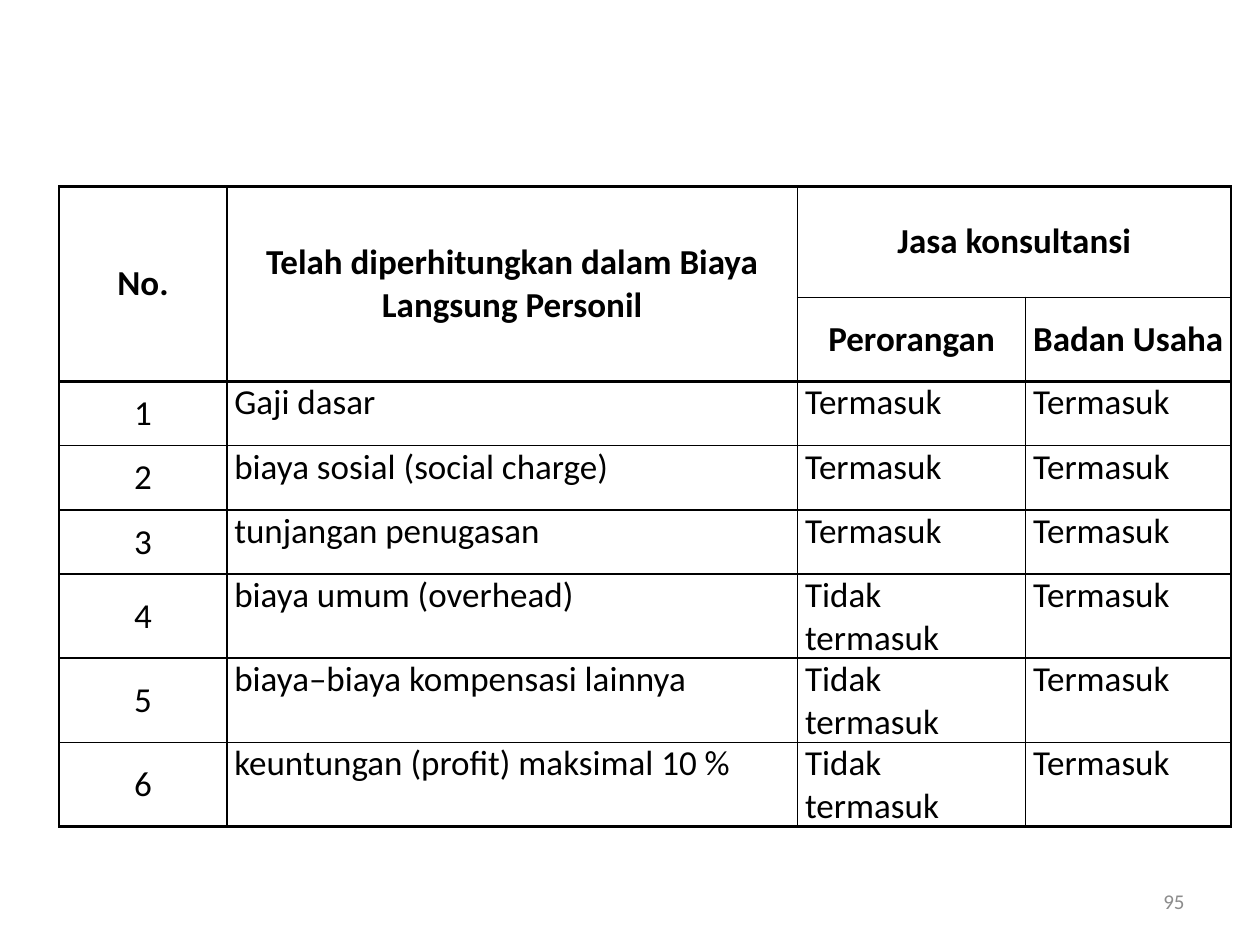
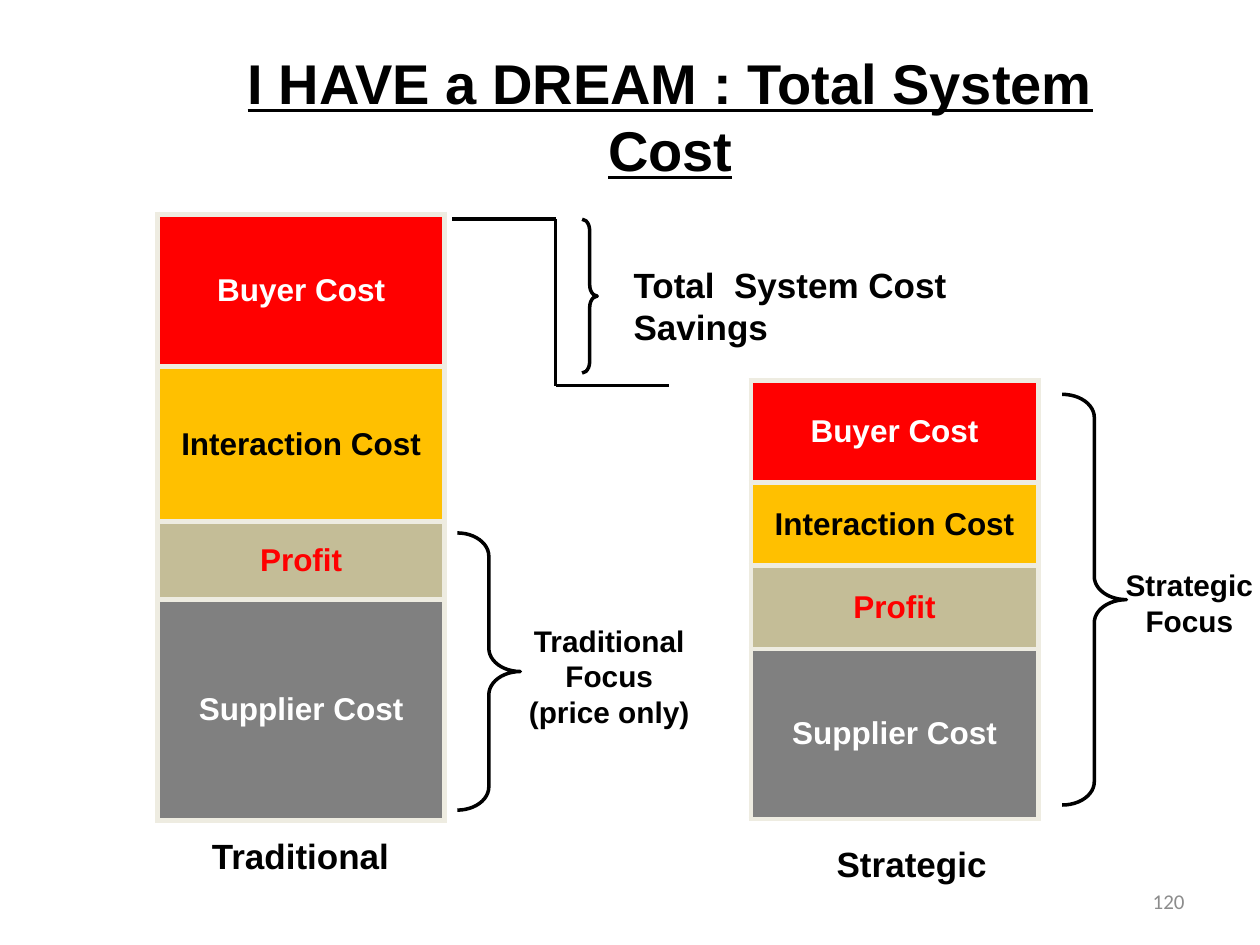
"""Build two slides: a table of personnel costs and a comparison of total system cost."""
import pptx
import pptx.util
import pptx.dml.color
import pptx.enum.shapes
import pptx.enum.text
import pptx.oxml.ns
from lxml import etree

COLORS = {
    "ink": "000000", "paper": "FFFFFF", "muted": "8C8C8C", "rule": "EEECE1",
    "buyer": "FF0000", "interaction": "FFC000", "profit": "C4BD97", "supplier": "808080",
}
COLUMNS, ROWS = 100, 75
SLIDE_WIDTH, SLIDE_HEIGHT = pptx.util.Inches(10), pptx.util.Inches(7.5)
ALIGN = pptx.enum.text.PP_ALIGN
ANCHOR = pptx.enum.text.MSO_ANCHOR
MIDDLE = ANCHOR.MIDDLE

PERSONNEL_COSTS = [
    ("Gaji dasar", "Termasuk"),
    ("biaya sosial (social charge)", "Termasuk"),
    ("tunjangan penugasan", "Termasuk"),
    ("biaya umum (overhead)", "Tidak termasuk"),
    ("biaya–biaya kompensasi lainnya", "Tidak termasuk"),
    ("keuntungan (profit) maksimal 10 %", "Tidak termasuk"),
]
COST_LAYERS = [
    ("Buyer Cost", "buyer", "paper"),
    ("Interaction Cost", "interaction", "ink"),
    ("Profit", "profit", "buyer"),
    ("Supplier Cost", "supplier", "paper"),
]


def across(columns):
    """Return the length of a number of grid columns."""
    return round(SLIDE_WIDTH * columns / COLUMNS)


def down(rows):
    """Return the length of a number of grid rows."""
    return round(SLIDE_HEIGHT * rows / ROWS)


def place(left, top, width, height):
    """Turn a grid area into slide lengths."""
    return across(left), down(top), across(width), down(height)


def rgb(name):
    """Look up a named colour."""
    return pptx.dml.color.RGBColor.from_string(COLORS[name])


def write(frame, text, size=20, font="Arial", color="ink", bold=True,
          underline=False, align=ALIGN.CENTER):
    """Write one formatted paragraph into a text frame."""
    paragraph = frame.paragraphs[0]
    paragraph.alignment = align
    run = paragraph.add_run()
    run.text = text
    run.font.size = pptx.util.Pt(size)
    run.font.name = font
    run.font.bold = bold
    run.font.underline = underline
    run.font.color.rgb = rgb(color)


def add_label(slide, area, text, anchor=ANCHOR.TOP, **style):
    """Add a wrapped text box on a grid area."""
    frame = slide.shapes.add_textbox(*place(*area)).text_frame
    frame.word_wrap = True
    frame.vertical_anchor = anchor
    write(frame, text, **style)


def add_page_number(slide, number):
    """Add the page number at the lower right."""
    add_label(slide, (71.7, 69.5, 23.3, 4), str(number), anchor=MIDDLE, size=12,
              font="Calibri", color="muted", bold=False, align=ALIGN.RIGHT)


def add_grid(slide, left, top, widths, heights):
    """Add an unbanded table with the given column widths and row heights."""
    area = place(left, top, sum(widths), sum(heights))
    table = slide.shapes.add_table(len(heights), len(widths), *area).table
    table.first_row = table.horz_banding = False
    for column, width in zip(table.columns, widths):
        column.width = across(width)
    for row, height in zip(table.rows, heights):
        row.height = down(height)
    return table


def set_borders(cell, color, **weights):
    """Draw cell borders from point weights keyed by L, R, T and B."""
    properties = cell._tc.get_or_add_tcPr()
    qn = pptx.oxml.ns.qn
    for side, weight in weights.items():
        border = etree.SubElement(properties, qn(f"a:ln{side}"), w=str(pptx.util.Pt(weight)))
        fill = etree.SubElement(border, qn("a:solidFill"))
        etree.SubElement(fill, qn("a:srgbClr"), val=COLORS[color])


def add_personnel_table(slide):
    """Add the table of what direct personnel cost includes."""
    widths = [13.3, 45.3, 18.1, 16.3]
    heights = [8.8] + [5.1] * (len(PERSONNEL_COSTS) + 1)
    table = add_grid(slide, 4.7, 14.8, widths, heights)
    for start, end in [((0, 0), (1, 0)), ((0, 1), (1, 1)), ((0, 2), (0, 3))]:
        table.cell(*start).merge(table.cell(*end))
    header_rows = [
        ["No.", "Telah diperhitungkan dalam Biaya Langsung Personil", "Jasa konsultansi", ""],
        ["", "", "Perorangan", "Badan Usaha"],
    ]
    cost_rows = [[str(number), cost, individual, "Termasuk"]
                 for number, (cost, individual) in enumerate(PERSONNEL_COSTS, 1)]
    heavy_rows, heavy_columns = {0, 2, len(heights)}, {0, len(widths)}
    for r, texts in enumerate(header_rows + cost_rows):
        for c, text in enumerate(texts):
            cell = table.cell(r, c)
            if cell.is_spanned:
                continue
            heading = r < len(header_rows)
            centered = heading or c == 0
            across_edges = {"T": r, "B": r + cell.span_height}
            side_edges = {"L": c, "R": c + cell.span_width}
            weights = {side: 1.5 if edge in heavy else 1
                       for edges, heavy in ((side_edges, heavy_columns), (across_edges, heavy_rows))
                       for side, edge in edges.items()}
            set_borders(cell, "ink", **weights)
            cell.fill.background()
            cell.margin_left = cell.margin_right = across(0.6)
            cell.margin_top = cell.margin_bottom = 0
            cell.vertical_anchor = MIDDLE if centered else ANCHOR.TOP
            write(cell.text_frame, text, font="Calibri", bold=heading,
                  align=ALIGN.CENTER if centered else ALIGN.JUSTIFY)


def add_cost_stack(slide, left, top, heights):
    """Add a stack of cost layers as a one-column table."""
    table = add_grid(slide, left, top, [22.8], heights)
    for r, (layer, fill, color) in enumerate(COST_LAYERS):
        cell = table.cell(r, 0)
        set_borders(cell, "rule", L=3, R=3, T=3, B=3)
        cell.fill.solid()
        cell.fill.fore_color.rgb = rgb(fill)
        cell.vertical_anchor = MIDDLE
        write(cell.text_frame, layer, size=18, color=color)


def draw_line(line):
    """Give a line the shared black stroke."""
    line.color.rgb = rgb("ink")
    line.width = pptx.util.Pt(2)


def add_brace(slide, area, curve):
    """Add a right brace with the given curve."""
    brace = slide.shapes.add_shape(pptx.enum.shapes.MSO_SHAPE.RIGHT_BRACE, *place(*area))
    brace.adjustments[0] = curve
    brace.shadow.inherit = False
    brace.fill.background()
    draw_line(brace.line)


def add_rule(slide, x1, y1, x2, y2):
    """Add a straight line between two grid points."""
    rule = slide.shapes.add_connector(pptx.enum.shapes.MSO_CONNECTOR.STRAIGHT,
                                      across(x1), down(y1), across(x2), down(y2))
    draw_line(rule.line)
    etree.SubElement(rule._element.spPr, pptx.oxml.ns.qn("a:effectLst"))


def add_cost_comparison(slide):
    """Add the two cost stacks with their braces and labels."""
    add_cost_stack(slide, 12.5, 17, [12.1, 12.3, 6.2, 17.5])
    add_cost_stack(slide, 59.6, 30.2, [8.1, 6.6, 6.6, 13.5])

    step, high, low = 44.1, 17.4, 30.6
    add_rule(slide, 35.9, high, step, high)
    add_rule(slide, step, high, step, low)
    add_rule(slide, step, low, 53.1, low)

    add_brace(slide, (36.3, 42.3, 5, 22), 0.37)
    add_brace(slide, (84.3, 31.3, 5.1, 32.6), 0.36)
    add_brace(slide, (46.2, high, 1.2, 12.2), 0.76)

    add_label(slide, (40.9, 48.9, 14.9, 9.6), "Traditional Focus (price only)", size=17)
    add_label(slide, (87.9, 44.5, 13, 6.8), "Strategic Focus", size=17)
    add_label(slide, (49.3, 20.4, 33.9, 7.7), "Total  System Cost Savings", align=ALIGN.LEFT)
    add_label(slide, (14.9, 65.7, 17.9, 4.4), "Traditional")
    add_label(slide, (63.4, 66.4, 17.9, 4.4), "Strategic")


def main():
    """Build and save the presentation."""
    deck = pptx.Presentation()
    deck.slide_width, deck.slide_height = SLIDE_WIDTH, SLIDE_HEIGHT
    blank = deck.slide_layouts[6]

    personnel = deck.slides.add_slide(blank)
    add_page_number(personnel, 95)
    add_personnel_table(personnel)

    system_cost = deck.slides.add_slide(blank)
    add_page_number(system_cost, 120)
    add_cost_comparison(system_cost)
    add_label(system_cost, (16.6, 4.5, 73.2, 9.3), "I HAVE a DREAM : Total System Cost",
              anchor=MIDDLE, size=32, underline=True)

    deck.save("out.pptx")


if __name__ == "__main__":
    main()
